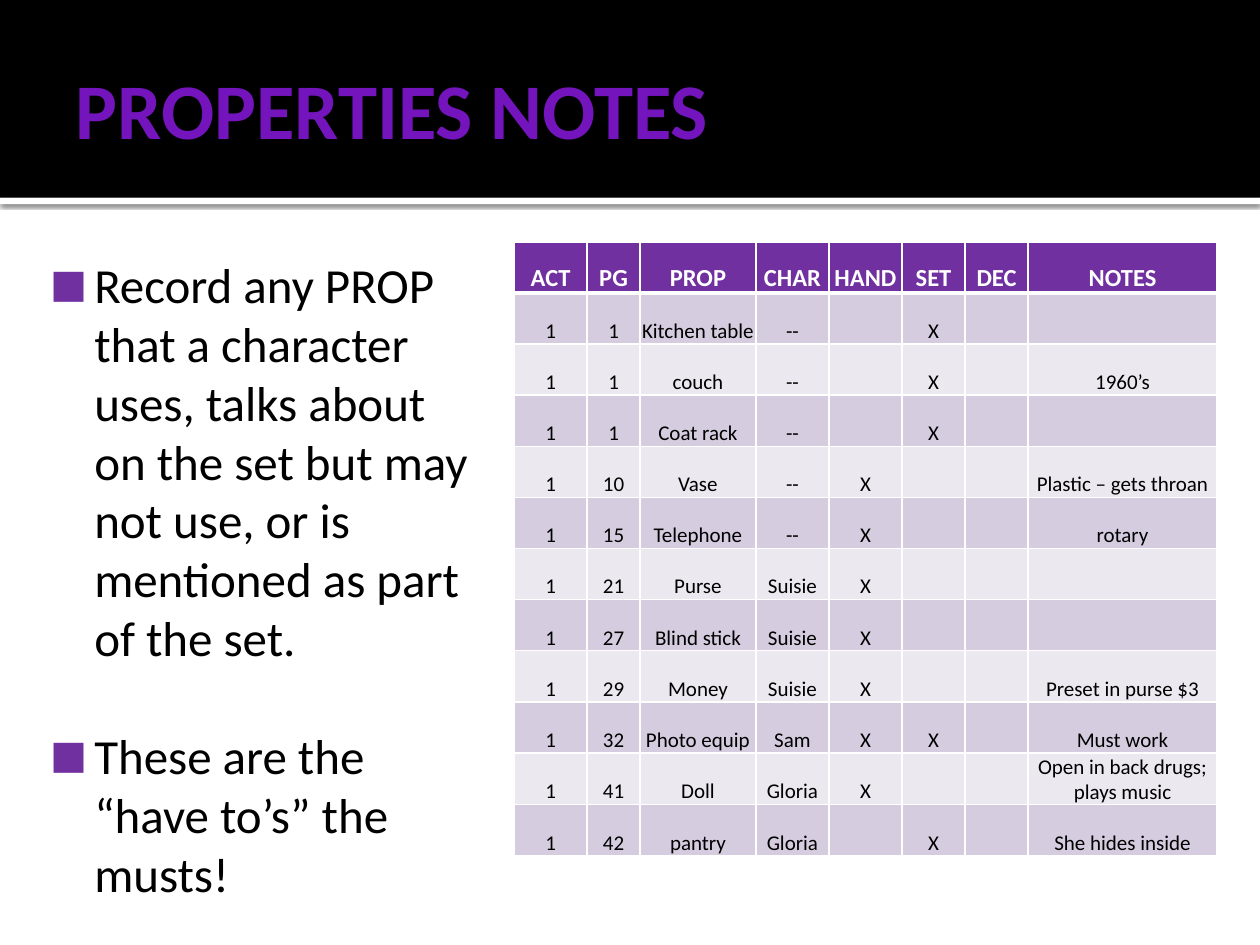
from lxml import etree
from pptx import Presentation
from pptx.dml.color import RGBColor
from pptx.enum import shapes, text
from pptx.oxml import parse_xml
from pptx.oxml.ns import nsdecls, qn
from pptx.util import Inches, Pt

FONT = "Calibri"
COLORS = {
    "white": "FFFFFF",
    "black": "000000",
    "title": "7414BC",
    "purple": "7030A0",
    "odd": "D5CDDF",
    "even": "EBE8F0",
}
BULLETS = [
    "Record any PROP that a character uses, talks about on the set but may "
    "not use, or is mentioned as part of the set.",
    "These are the “have to’s” the musts!",
]
COL_WIDTHS = [0.58, 0.42, 0.92, 0.58, 0.58, 0.5, 0.5, 1.5]
PROPS = [
    ["ACT", "PG", "PROP", "CHAR", "HAND", "SET", "DEC", "NOTES"],
    ["1", "1", "Kitchen table", "--", "", "X", "", ""],
    ["1", "1", "couch", "--", "", "X", "", "1960’s"],
    ["1", "1", "Coat rack", "--", "", "X", "", ""],
    ["1", "10", "Vase", "--", "X", "", "", "Plastic – gets throan"],
    ["1", "15", "Telephone", "--", "X", "", "", "rotary"],
    ["1", "21", "Purse", "Suisie", "X", "", "", ""],
    ["1", "27", "Blind stick", "Suisie", "X", "", "", ""],
    ["1", "29", "Money", "Suisie", "X", "", "", "Preset in purse $3"],
    ["1", "32", "Photo equip", "Sam", "X", "X", "", "Must work"],
    ["1", "41", "Doll", "Gloria", "X", "", "", "Open in back drugs; plays music"],
    ["1", "42", "pantry", "Gloria", "", "X", "", "She hides inside"],
]


def rgb(name):
    return RGBColor.from_string(COLORS[name])


def write(p, words, size, color, bold=False, align=text.PP_ALIGN.LEFT):
    p.alignment = align
    r = p.add_run()
    r.text = words
    r.font.name, r.font.size, r.font.bold = FONT, Pt(size), bold
    r.font.color.rgb = rgb(color)


def set_margins(target, left, top, right, bottom):
    """Set the inner margins, in inches, of a text frame or a cell."""
    target.margin_left, target.margin_top = Inches(left), Inches(top)
    target.margin_right, target.margin_bottom = Inches(right), Inches(bottom)


def add_band(s, left, top, width, height, color):
    sp = s.shapes.add_shape(shapes.MSO_SHAPE.RECTANGLE, Inches(left), Inches(top),
                            Inches(width), Inches(height))
    sp.shadow.inherit = False
    sp.fill.solid()
    sp.fill.fore_color.rgb = rgb(color)
    sp.line.fill.background()
    return sp


def add_shadow(sp):
    effects = sp._element.spPr.find(qn("a:effectLst"))
    effects.append(parse_xml(
        f'<a:outerShdw {nsdecls("a")} blurRad="{Pt(2.5)}" dist="{Pt(0.8)}" '
        f'dir="5400000" algn="tl" rotWithShape="0"><a:srgbClr val="{COLORS["black"]}">'
        '<a:alpha val="60000"/></a:srgbClr></a:outerShdw>'))


def add_header(s, left, top, width, height):
    rule = add_band(s, left, top + height, width, 0.05, "white")
    add_shadow(rule)
    add_band(s, left, top, width, height, "black")

    title = s.shapes.title
    s.shapes._spTree.append(title._element)
    title.left, title.top = Inches(left + 0.5), Inches(top + 0.17)
    title.width, title.height = Inches(width - 1), Inches(height - 0.2)
    tf = title.text_frame
    tf.vertical_anchor = text.MSO_ANCHOR.MIDDLE
    set_margins(tf, 0.1, 0.05, 0.05, 0.05)
    write(tf.paragraphs[0], "PROPERTIES NOTES", 45, "title", bold=True)


def add_bullet(p):
    pPr = p._p.get_or_add_pPr()
    pPr.set("marL", str(Inches(0.48)))
    pPr.set("indent", str(Inches(-0.35)))
    color = etree.SubElement(pPr, qn("a:buClr"))
    etree.SubElement(color, qn("a:srgbClr"), val=COLORS["purple"])
    etree.SubElement(pPr, qn("a:buSzPct"), val="80000")
    etree.SubElement(pPr, qn("a:buFont"), typeface=FONT)
    etree.SubElement(pPr, qn("a:buChar"), char="■")


def add_bullets(s, left, top, width, height):
    sp = s.shapes.add_textbox(Inches(left), Inches(top), Inches(width), Inches(height))
    tf = sp.text_frame
    tf.word_wrap = True
    set_margins(tf, 0.1, 0.1, 0.1, 0.05)
    for i, words in enumerate(BULLETS):
        p = tf.add_paragraph() if i else tf.paragraphs[0]
        p.space_before = Pt(34 if i else 0)
        add_bullet(p)
        write(p, words, 28, "black")


def set_borders(cell, bottom):
    """Draw white cell edges, 1 pt wide except for the bottom one."""
    tcPr = cell._tc.get_or_add_tcPr()
    edges = {"lnL": 1, "lnR": 1, "lnT": 1, "lnB": bottom}
    for i, (tag, width) in enumerate(edges.items()):
        tcPr.insert(i, parse_xml(
            f'<a:{tag} {nsdecls("a")} w="{Pt(width)}"><a:solidFill>'
            f'<a:srgbClr val="{COLORS["white"]}"/></a:solidFill></a:{tag}>'))


def add_props_table(s, left, top, width, height):
    table = s.shapes.add_table(len(PROPS), len(COL_WIDTHS), Inches(left), Inches(top),
                               Inches(width), Inches(height)).table
    for col, col_width in zip(table.columns, COL_WIDTHS):
        col.width = Inches(col_width)
    for i, values in enumerate(PROPS):
        header = i == 0
        fill = "purple" if header else "odd" if i % 2 else "even"
        for j, value in enumerate(values):
            cell = table.cell(i, j)
            cell.fill.solid()
            cell.fill.fore_color.rgb = rgb(fill)
            cell.vertical_anchor = text.MSO_ANCHOR.BOTTOM
            set_margins(cell, 0.01, 0.01, 0.01, 0)
            set_borders(cell, 3 if header else 1)
            if value:
                write(cell.text_frame.paragraphs[0], value, 14 if header else 12,
                      "white" if header else "black", bold=header,
                      align=text.PP_ALIGN.CENTER)


def main():
    prs = Presentation()
    prs.slide_width, prs.slide_height = Inches(10), Inches(7.5)
    s = prs.slides.add_slide(prs.slide_layouts[5])
    add_header(s, 0, 0, 10, 1.57)
    add_bullets(s, 0.17, 1.92, 3.7, 4.82)
    add_props_table(s, 4.08, 1.92, 5.58, 4.87)
    prs.save("out.pptx")


if __name__ == "__main__":
    main()
